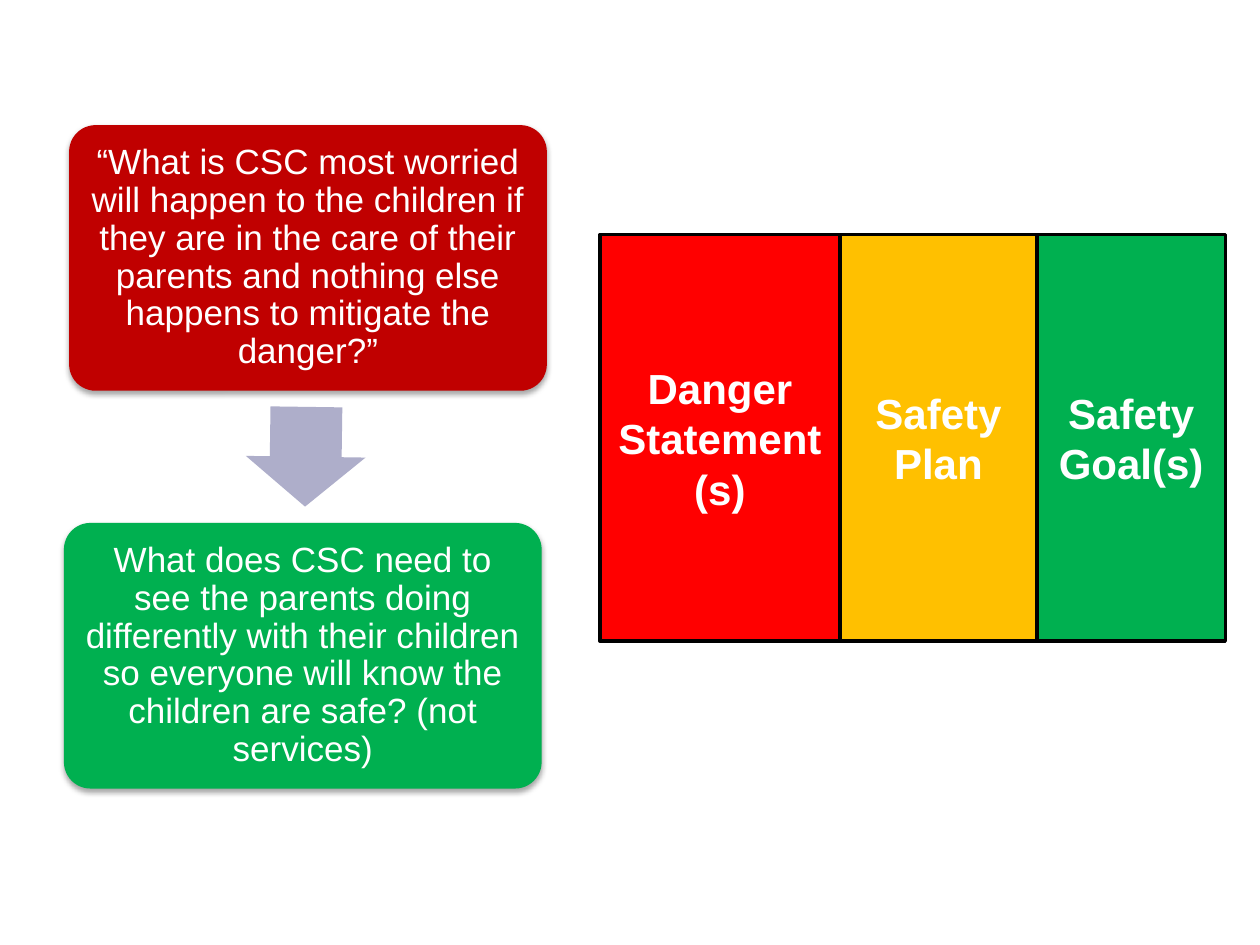
from dataclasses import dataclass
from itertools import accumulate

from lxml import etree
from pptx import Presentation
from pptx.dml.color import RGBColor
from pptx.enum.shapes import MSO_SHAPE
from pptx.enum.text import MSO_ANCHOR, PP_ALIGN
from pptx.oxml.ns import qn
from pptx.util import Pt

ROUNDED = MSO_SHAPE.ROUNDED_RECTANGLE
RECTANGLE = MSO_SHAPE.RECTANGLE
RIGHT_ARROW = MSO_SHAPE.RIGHT_ARROW
MIDDLE = MSO_ANCHOR.MIDDLE
CENTER = PP_ALIGN.CENTER

WHITE = RGBColor(0xFF, 0xFF, 0xFF)
BLACK = RGBColor(0x00, 0x00, 0x00)
DARK_RED = RGBColor(0xC0, 0x00, 0x00)
RED = RGBColor(0xFF, 0x00, 0x00)
AMBER = RGBColor(0xFF, 0xC0, 0x00)
GREEN = RGBColor(0x00, 0xB0, 0x50)
LAVENDER = RGBColor(0xAE, 0xAE, 0xCA)

CARD_WIDTH, CARD_HEIGHT = 273, 151.8
PANEL_LEFT, PANEL_TOP, PANEL_HEIGHT = 342.8, 134, 232.4


@dataclass
class Card:
    text: str
    left: float
    top: float
    color: RGBColor


@dataclass
class Panel:
    text: str
    width: float
    color: RGBColor


CARDS = [
    Card("“What is CSC most worried will happen to the children if they are in the care of "
         "their parents and nothing else happens to mitigate the danger?”", 39.5, 71.5, DARK_RED),
    Card("What does CSC need to see the parents doing differently with their children so "
         "everyone will know the children are safe? (not services)", 36.5, 298.8, GREEN),
]
PANELS = [
    Panel("Danger Statement(s)", 137.2, RED),
    Panel("Safety Plan", 112.6, AMBER),
    Panel("Safety Goal(s)", 107.6, GREEN),
]


def add_filled(page, kind, left: float, top: float, width: float, height: float, color: RGBColor):
    shape = page.shapes.add_shape(kind, Pt(left), Pt(top), Pt(width), Pt(height))
    shape.fill.solid()
    shape.fill.fore_color.rgb = color
    shape.line.fill.background()
    shape.shadow.inherit = False
    return shape


def write_text(shape, text: str, *, size: float, bold: bool = False, spacing: float = 1.0) -> None:
    frame = shape.text_frame
    frame.word_wrap = True
    frame.vertical_anchor = MIDDLE
    paragraph = frame.paragraphs[0]
    paragraph.alignment = CENTER
    paragraph.line_spacing = spacing
    span = paragraph.add_run()
    span.text = text
    span.font.name = "Arial"
    span.font.size = Pt(size)
    span.font.bold = bold
    span.font.color.rgb = WHITE


def add_shadow(shape) -> None:
    effects = shape._element.spPr.find(qn("a:effectLst"))
    shadow = etree.SubElement(effects, qn("a:outerShdw"), blurRad=str(Pt(3.1)),
                              dist=str(Pt(1.8)), dir="5400000", rotWithShape="0")
    color = etree.SubElement(shadow, qn("a:srgbClr"), val=str(BLACK))
    etree.SubElement(color, qn("a:alpha"), val="35000")


def draw_card(page, card: Card) -> None:
    shape = add_filled(page, ROUNDED, card.left, card.top, CARD_WIDTH, CARD_HEIGHT, card.color)
    shape.adjustments[0] = 0.1
    add_shadow(shape)
    frame = shape.text_frame
    frame.margin_left = frame.margin_right = Pt(6)
    frame.margin_top = frame.margin_bottom = Pt(6)
    write_text(shape, card.text, size=20, spacing=0.9)


def draw_arrow(page) -> None:
    arrow = add_filled(page, RIGHT_ARROW, 146.2, 226.8, 57, 68.4, LAVENDER)
    arrow.adjustments[0] = 0.6
    arrow.adjustments[1] = 0.5
    arrow.rotation = 90.8


def draw_panel(page, panel: Panel, left: float) -> None:
    shape = add_filled(page, RECTANGLE, left, PANEL_TOP, panel.width, PANEL_HEIGHT, panel.color)
    shape.line.color.rgb = BLACK
    shape.line.width = Pt(2)
    write_text(shape, panel.text, size=24, bold=True)


def main() -> None:
    deck = Presentation()
    deck.slide_width, deck.slide_height = Pt(720), Pt(540)
    page = deck.slides.add_slide(deck.slide_layouts[6])
    for card in CARDS:
        draw_card(page, card)
    draw_arrow(page)
    lefts = accumulate((panel.width for panel in PANELS), initial=PANEL_LEFT)
    for panel, left in zip(PANELS, lefts):
        draw_panel(page, panel, left)
    deck.save("out.pptx")


if __name__ == "__main__":
    main()
